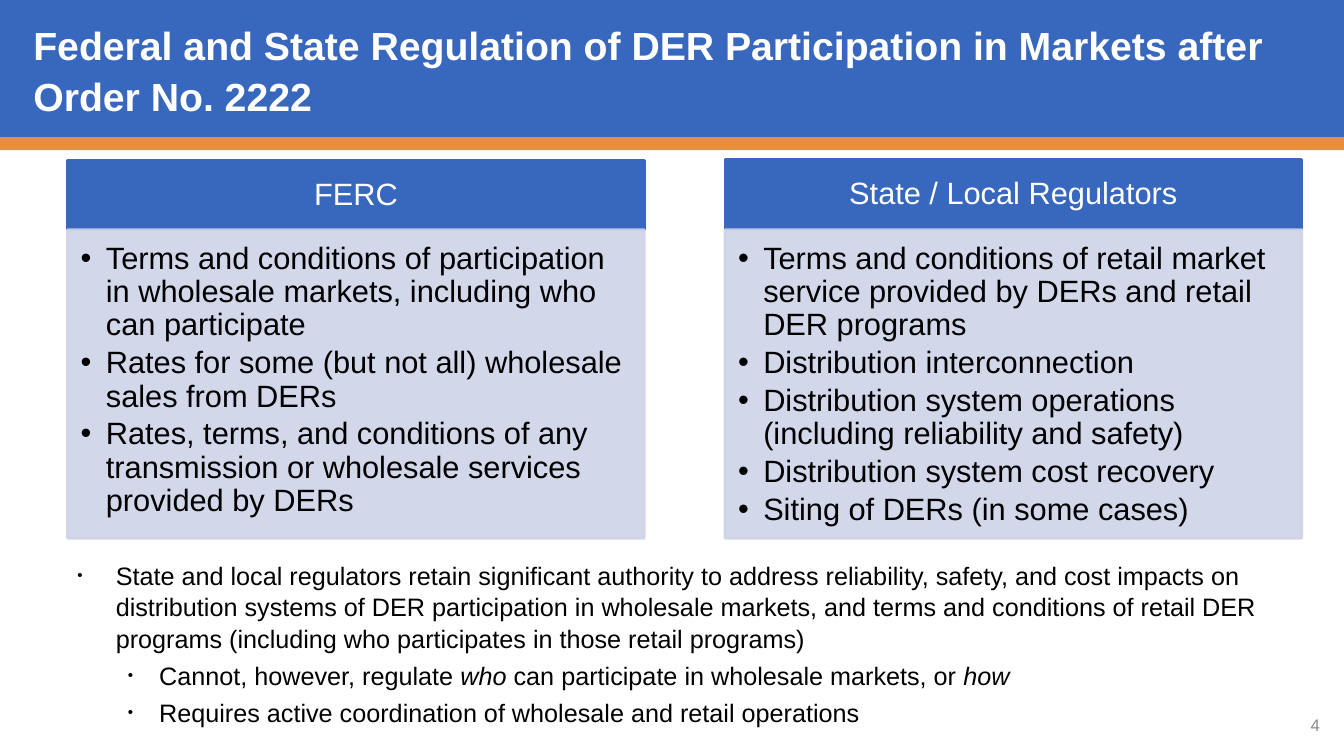
from dataclasses import dataclass

from lxml import etree
from pptx import Presentation
from pptx.dml.color import RGBColor
from pptx.enum.shapes import MSO_SHAPE
from pptx.enum.text import MSO_ANCHOR, PP_ALIGN
from pptx.oxml.ns import qn
from pptx.shapes.autoshape import Shape
from pptx.slide import Slide
from pptx.text.text import TextFrame, _Paragraph
from pptx.util import Inches, Pt

RECTANGLE = MSO_SHAPE.RECTANGLE
TOP, MIDDLE = MSO_ANCHOR.TOP, MSO_ANCHOR.MIDDLE
LEFT, CENTER, RIGHT = PP_ALIGN.LEFT, PP_ALIGN.CENTER, PP_ALIGN.RIGHT

BLUE = RGBColor(0x38, 0x67, 0xBE)
ORANGE = RGBColor(0xE2, 0x90, 0x40)
LAVENDER = RGBColor(0xCE, 0xD3, 0xE8)
GRAY = RGBColor(0x8C, 0x8C, 0x8C)
WHITE = RGBColor(0xFF, 0xFF, 0xFF)
BLACK = RGBColor(0x00, 0x00, 0x00)

FONT = "Arial"
SLIDE_WIDTH, SLIDE_HEIGHT = Inches(13.33), Inches(7.5)
BLANK_LAYOUT = 6


@dataclass(frozen=True)
class Area:
    """A rectangle in percent of the slide's width and height."""
    left: float
    top: float
    width: float
    height: float

    def emu(self) -> tuple[int, int, int, int]:
        return (int(SLIDE_WIDTH * self.left / 100), int(SLIDE_HEIGHT * self.top / 100),
                int(SLIDE_WIDTH * self.width / 100), int(SLIDE_HEIGHT * self.height / 100))


@dataclass(frozen=True)
class Card:
    left: float
    header_top: float
    heading: str
    points: tuple[str, ...]


@dataclass(frozen=True)
class BulletStyle:
    level: int
    margin: float
    hang: float
    size_percent: int = 100


@dataclass(frozen=True)
class Note:
    """A closing remark; every second span is italic."""
    style: BulletStyle
    spans: tuple[str, ...]


BAND_HEIGHT = 18.13
CARD_WIDTH = 42.91
HEADER_HEIGHT = 9.2
BODY_TOP, BODY_HEIGHT = 30.4, 40.8

CARD_BULLET = BulletStyle(1, 0.25, 0.25)
NOTE_BULLET = BulletStyle(0, 0.38, 0.38, 60)
SUBNOTE_BULLET = BulletStyle(1, 0.81, 0.31, 60)

CARDS = (
    Card(5.03, 21.2, "FERC", (
        "Terms and conditions of participation in wholesale markets, including who can participate",
        "Rates for some (but not all) wholesale sales from DERs",
        "Rates, terms, and conditions of any transmission or wholesale services provided by DERs",
    )),
    Card(53.94, 21.07, "State / Local Regulators", (
        "Terms and conditions of retail market service provided by DERs and retail DER programs",
        "Distribution interconnection",
        "Distribution system operations (including reliability and safety)",
        "Distribution system cost recovery",
        "Siting of DERs (in some cases)",
    )),
)

NOTES = (
    Note(NOTE_BULLET, (
        "State and local regulators retain significant authority to address reliability, safety, "
        "and cost impacts on distribution systems of DER participation in wholesale markets, and "
        "terms and conditions of retail DER programs (including who participates in those retail "
        "programs)",)),
    Note(SUBNOTE_BULLET, ("Cannot, however, regulate ", "who ",
                          "can participate in wholesale markets, or ", "how")),
    Note(SUBNOTE_BULLET, ("Requires active coordination of wholesale and retail operations",)),
)


def add_panel(page: Slide, area: Area, color: RGBColor, outlined: bool = False,
              opacity: int = 100) -> Shape:
    panel = page.shapes.add_shape(RECTANGLE, *area.emu())
    panel.shadow.inherit = False
    panel.fill.solid()
    panel.fill.fore_color.rgb = color
    if outlined:
        panel.line.color.rgb = color
        panel.line.width = Pt(2)
    else:
        panel.line.fill.background()
    if opacity < 100:
        for shade in panel._element.spPr.iter(qn("a:srgbClr")):
            etree.SubElement(shade, qn("a:alpha"), val=str(opacity * 1000))
    return panel


def set_up_frame(box: Shape, anchor: MSO_ANCHOR,
                 insets: tuple[float, float, float, float] = (0.1, 0.05, 0.1, 0.05)) -> TextFrame:
    """Wrap and anchor the text; insets are left, top, right, bottom in inches."""
    frame = box.text_frame
    frame.word_wrap = True
    frame.vertical_anchor = anchor
    (frame.margin_left, frame.margin_top,
     frame.margin_right, frame.margin_bottom) = map(Inches, insets)
    return frame


def style_paragraph(para: _Paragraph, size: int, color: RGBColor, align: PP_ALIGN = LEFT,
                    bold: bool = False) -> None:
    para.alignment = align
    para.font.name = FONT
    para.font.size = Pt(size)
    para.font.bold = bold
    para.font.color.rgb = color


def add_bullet(para: _Paragraph, style: BulletStyle) -> None:
    para.level = style.level
    properties = para._p.get_or_add_pPr()
    properties.set("marL", str(Inches(style.margin)))
    properties.set("indent", str(-Inches(style.hang)))
    etree.SubElement(properties, qn("a:buSzPct"), val=str(style.size_percent * 1000))
    etree.SubElement(properties, qn("a:buFont"), typeface=FONT)
    etree.SubElement(properties, qn("a:buChar"), char="•")


def next_paragraph(frame: TextFrame, index: int) -> _Paragraph:
    return frame.add_paragraph() if index else frame.paragraphs[0]


def add_title(page: Slide) -> None:
    add_panel(page, Area(0, 1.73, 100, BAND_HEIGHT), ORANGE)
    add_panel(page, Area(0, 0, 100, BAND_HEIGHT), BLUE)
    box = page.shapes.add_textbox(*Area(2.48, 0, 95.42, BAND_HEIGHT).emu())
    para = set_up_frame(box, MIDDLE, (0, 0, 0, 0)).paragraphs[0]
    para.text = "Federal and State Regulation of DER Participation in Markets after Order No. 2222"
    para.line_spacing = Pt(36)
    style_paragraph(para, 28, WHITE, bold=True)


def add_page_number(page: Slide) -> None:
    box = page.shapes.add_textbox(*Area(95.65, 93.6, 3.3, 4.67).emu())
    para = set_up_frame(box, MIDDLE).paragraphs[0]
    para.text = "4"
    style_paragraph(para, 12, GRAY, RIGHT)


def add_card(page: Slide, card: Card) -> None:
    header = add_panel(page, Area(card.left, card.header_top, CARD_WIDTH, HEADER_HEIGHT),
                       BLUE, outlined=True)
    heading = set_up_frame(header, MIDDLE, (0.17, 0.1, 0.17, 0.1)).paragraphs[0]
    heading.text = card.heading
    heading.line_spacing = 0.9
    style_paragraph(heading, 22, WHITE, CENTER)

    body = add_panel(page, Area(card.left, BODY_TOP, CARD_WIDTH, BODY_HEIGHT),
                     LAVENDER, outlined=True, opacity=90)
    frame = set_up_frame(body, TOP, (0.13, 0.13, 0.17, 0.19))
    for index, point in enumerate(card.points):
        para = next_paragraph(frame, index)
        para.text = point
        add_bullet(para, CARD_BULLET)
        para.line_spacing = 0.9
        para.space_after = Pt(3.3)
        style_paragraph(para, 22, BLACK)


def add_notes_list(page: Slide) -> None:
    box = page.shapes.add_textbox(*Area(5.03, 73.2, 91.9, 22.8).emu())
    frame = set_up_frame(box, TOP)
    for index, note in enumerate(NOTES):
        para = next_paragraph(frame, index)
        add_bullet(para, note.style)
        para.line_spacing = 1.05
        para.space_before = Pt(3.6 if index else 0)
        style_paragraph(para, 18, BLACK)
        for position, words in enumerate(note.spans):
            span = para.add_run()
            span.text = words
            span.font.italic = position % 2 == 1


def main() -> None:
    deck = Presentation()
    deck.slide_width, deck.slide_height = SLIDE_WIDTH, SLIDE_HEIGHT
    page = deck.slides.add_slide(deck.slide_layouts[BLANK_LAYOUT])
    add_title(page)
    add_page_number(page)
    for card in CARDS:
        add_card(page, card)
    add_notes_list(page)
    deck.save("out.pptx")


if __name__ == "__main__":
    main()
